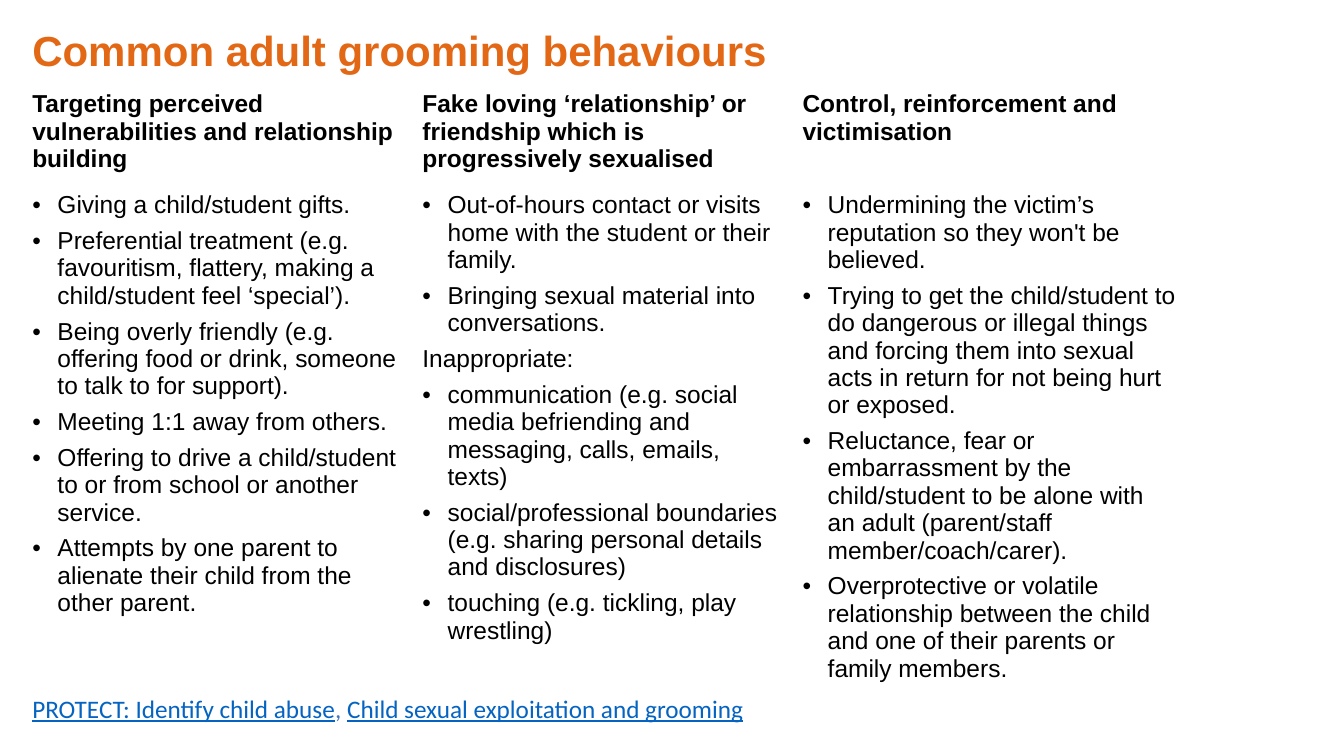
from lxml import etree
from pptx import Presentation
from pptx.dml.color import RGBColor
from pptx.enum.text import MSO_ANCHOR, PP_ALIGN
from pptx.oxml.ns import qn
from pptx.util import Inches, Pt

LEFT, TOP = PP_ALIGN.LEFT, MSO_ANCHOR.TOP

TITLE = "Common adult grooming behaviours"
HEADS = [
    "Targeting perceived vulnerabilities and relationship building",
    "Fake loving ‘relationship’ or friendship which is progressively sexualised",
    "Control, reinforcement and victimisation",
]
PLAIN = {"Inappropriate:"}  # lines without a bullet
LISTS = [
    [
        "Giving a child/student gifts.",
        "Preferential treatment (e.g. favouritism, flattery, making a child/student feel ‘special’).",
        "Being overly friendly (e.g. offering food or drink, someone to talk to for support).",
        "Meeting 1:1 away from others.",
        "Offering to drive a child/student to or from school or another service.",
        "Attempts by one parent to alienate their child from the other parent.",
    ],
    [
        "Out-of-hours contact or visits home with the student or their family.",
        "Bringing sexual material into conversations.",
        "Inappropriate:",
        "communication (e.g. social media befriending and messaging, calls, emails, texts)",
        "social/professional boundaries (e.g. sharing personal details and disclosures)",
        "touching (e.g. tickling, play wrestling)",
    ],
    [
        "Undermining the victim’s reputation so they won't be believed.",
        "Trying to get the child/student to do dangerous or illegal things and forcing them "
        "into sexual acts in return for not being hurt or exposed.",
        "Reluctance, fear or embarrassment by the child/student to be alone with an adult "
        "(parent/staff member/coach/carer).",
        "Overprotective or volatile relationship between the child and one of their parents "
        "or family members.",
    ],
]
LINKS = ["PROTECT: Identify child abuse", "Child sexual exploitation and grooming"]

THEME = {
    "title": {"size": 30, "font": "Arial", "color": "E26815", "bold": True},
    "head": {"size": 17.5, "font": "Arial", "color": "000000", "bold": True},
    "body": {"size": 17.5, "font": "Arial", "color": "000000"},
    "link": {"size": 18, "font": "Calibri", "color": "0563C1", "line": True},
    "comma": {"size": 18, "font": "Calibri", "color": "4472C4"},
}
EDGE = 0.22
COLS, ROWS = [3.87, 3.77, 3.92], [1, 4.32]
INDENT = 0.25


def write(par, text, size, font, color, bold=False, line=False):
    run = par.add_run()
    run.text = text
    face = run.font
    face.size, face.name = Pt(size), font
    face.bold, face.underline = bold, line
    face.color.rgb = RGBColor.from_string(color)


def bullet(par):
    props = par._p.get_or_add_pPr()
    props.set("marL", str(Inches(INDENT)))
    props.set("indent", str(-Inches(INDENT)))
    etree.SubElement(props, qn("a:buFont")).set("typeface", "Arial")
    etree.SubElement(props, qn("a:buChar")).set("char", "•")


def grid(slide, top, cols, rows):
    """Add a table with no banding and no cell fill."""
    frame = slide.shapes.add_table(
        len(rows), len(cols), Inches(EDGE), Inches(top), Inches(sum(cols)), Inches(sum(rows)))
    table = frame.table
    table.first_row = table.horz_banding = False
    for col, width in zip(table.columns, cols):
        col.width = Inches(width)
    for row, height in zip(table.rows, rows):
        row.height = Inches(height)
    for cell in table.iter_cells():
        cell.fill.background()
        cell.vertical_anchor = TOP
    return table


def fill_list(frame, items):
    for i, item in enumerate(items):
        par = frame.add_paragraph() if i else frame.paragraphs[0]
        if item not in PLAIN:
            bullet(par)
        if i:
            par.space_before = Pt(6)
        write(par, item, **THEME["body"])


def main():
    deck = Presentation()
    deck.slide_width, deck.slide_height = Inches(13.33), Inches(7.5)
    slide = deck.slides.add_slide(deck.slide_layouts[5])

    title = slide.shapes.title
    title.left, title.top = Inches(EDGE), Inches(0.25)
    title.width, title.height = Inches(sum(COLS)), Inches(0.84)
    title.text_frame.vertical_anchor = TOP
    title.text_frame.word_wrap = True
    par = title.text_frame.paragraphs[0]
    par.alignment, par.line_spacing = LEFT, 0.9
    write(par, TITLE, **THEME["title"])

    table = grid(slide, 0.85, COLS, ROWS)
    for i, (head, items) in enumerate(zip(HEADS, LISTS)):
        write(table.cell(0, i).text_frame.paragraphs[0], head, **THEME["head"])
        fill_list(table.cell(1, i).text_frame, items)

    foot = grid(slide, 6.84, [7.54], [0.41])
    par = foot.cell(0, 0).text_frame.paragraphs[0]
    for i, link in enumerate(LINKS):
        if i:
            write(par, ", ", **THEME["comma"])
        write(par, link, **THEME["link"])

    deck.save("out.pptx")


if __name__ == "__main__":
    main()
